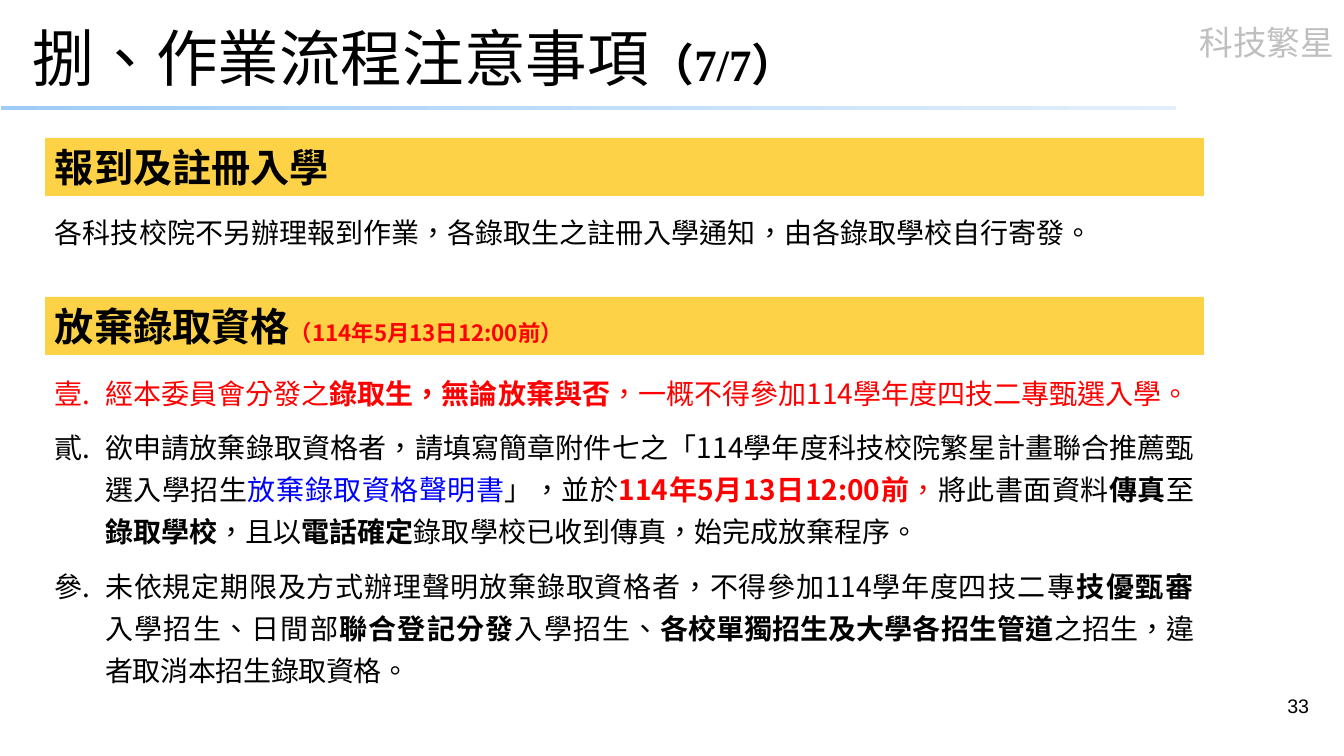
from lxml import etree
from pptx import Presentation
from pptx import util as u
from pptx.dml.color import RGBColor
from pptx.enum import shapes, text
from pptx.oxml.ns import qn

BLACK = RGBColor(0, 0, 0)
RED = RGBColor(255, 0, 0)
BLUE = RGBColor(0, 0, 255)
GREY = RGBColor(0xBF, 0xBF, 0xBF)
YELLOW = RGBColor(0xFD, 0xD2, 0x47)
BAR_START = RGBColor(0x9F, 0xCC, 0xF6)
BAR_END = RGBColor(0xE2, 0xEE, 0xFB)
SANS_TC, SANS_JP = "Noto Sans CJK SC", "Noto Sans CJK JP"

# Content: each run is (text, changes from the box's base style)
BOLD = {"bold": True}
TITLE = [("捌、作業流程注意事項", {}),
         ("（7/7）", {"size": 32, "latin": "Times New Roman", "bold": True})]
TAG = [("科技繁星", {})]
PAGE_NUMBER = [("33", {})]
HEADINGS = [
    (138, [("報到及註冊入學", {})]),
    (297, [("放棄錄取資格", {}),
           ("（114年5月13日12:00前）", {"size": 16, "color": RED})]),
]
ENROLMENT = [("各科技校院不另辦理報到作業，各錄取生之註冊入學通知，由各錄取學校自行寄發。", {})]
RULES = [
    [("經本委員會分發之", {"color": RED}),
     ("錄取生，無論放棄與否", {"color": RED, "bold": True}),
     ("，一概不得參加114學年度四技二專甄選入學。", {"color": RED})],
    [("欲申請放棄錄取資格者，請填寫簡章附件七之「114學年度科技校院繁星計畫聯合推薦甄選入學招生", {}),
     ("放棄錄取資格聲明書", {"color": BLUE}),
     ("」，並於", {}),
     ("114年5月13日12:00前", {"color": RED, "bold": True}),
     ("，", {"color": RED}),
     ("將此書面資料", {}), ("傳真", BOLD), ("至", {}), ("錄取學校", BOLD),
     ("，且以", {}), ("電話確定", BOLD),
     ("錄取學校已收到傳真，始完成放棄程序。", {})],
    [("未依規定期限及方式辦理聲明放棄錄取資格者，不得參加114學年度", {}),
     ("四技二專", {"spacing": 50}),
     ("技優甄審", {"bold": True, "spacing": 50}),
     ("入學招生、日間部", {"spacing": 50}),
     ("聯合登記分發", {"bold": True, "spacing": 50}),
     ("入學招生", {"spacing": 50}),
     ("、", {}),
     ("各校單獨招生及大學各招生管道", {"bold": True, "spacing": -30}),
     ("之招生，違者取消本招生錄取資格", {"spacing": -30}),
     ("。", {})],
]

PX_PER_INCH = 100.8
LEFT, WIDTH = 45, 1159  # shared column of headings and body text


def px(length):
    return u.Emu(round(length * u.Inches(1) / PX_PER_INCH))


def add_runs(paragraph, runs, size, font=SANS_TC, color=BLACK, bold=False):
    for words, changes in runs:
        style = {"size": size, "latin": font, "color": color, "bold": bold, **changes}
        run = paragraph.add_run()
        run.text = words
        run.font.size = u.Pt(style["size"])
        run.font.bold = style["bold"]
        run.font.color.rgb = style["color"]
        run.font.name = style["latin"]
        properties = run.font._element
        properties.set("lang", "zh-TW")
        if "spacing" in style:
            properties.set("spc", str(style["spacing"]))
        etree.SubElement(properties, qn("a:ea")).set("typeface", font)


def add_text(box, paragraphs, align=text.PP_ALIGN.LEFT,
             anchor=text.MSO_ANCHOR.TOP, numbered=False, **style):
    frame = box.text_frame
    frame.word_wrap = True
    frame.vertical_anchor = anchor
    for index, runs in enumerate(paragraphs):
        paragraph = frame.add_paragraph() if index else frame.paragraphs[0]
        paragraph.alignment = align
        if numbered:
            paragraph.line_spacing = u.Pt(30)
            paragraph.space_after = u.Pt(6)
            if index:
                paragraph.space_before = u.Pt(3)
            properties = paragraph._p.get_or_add_pPr()
            properties.set("marL", str(u.Inches(0.5)))
            properties.set("indent", str(-u.Inches(0.5)))
            properties.set("hangingPunct", "0")
            number = etree.SubElement(properties, qn("a:buAutoNum"))
            number.set("type", "ea1ChtPeriod")
        add_runs(paragraph, runs, **style)


def add_box(slide, left, top, width, height):
    return slide.shapes.add_textbox(px(left), px(top), px(width), px(height))


def add_bar(slide, left, top, width, height):
    bar = slide.shapes.add_shape(shapes.MSO_SHAPE.RECTANGLE,
                                 px(left), px(top), px(width), px(height))
    bar.shadow.inherit = False
    bar.line.fill.background()
    return bar


def main():
    presentation = Presentation()
    presentation.slide_width, presentation.slide_height = px(1344), px(756)
    slide = presentation.slides.add_slide(presentation.slide_layouts[6])

    # Rule under the title
    rule = add_bar(slide, 1, 106, 1175, 4)
    rule.fill.gradient()
    rule.fill.gradient_angle = 0
    for stop, color in zip(rule.fill.gradient_stops, (BAR_START, BAR_END)):
        stop.color.rgb = color

    # Title, corner tag and page number
    add_text(add_box(slide, 23, 22, 1138, 70), [TITLE],
             anchor=text.MSO_ANCHOR.MIDDLE, size=44, font=SANS_JP)
    add_text(add_box(slide, 1106, 17, 238, 50), [TAG],
             align=text.PP_ALIGN.RIGHT, size=24, font=SANS_JP, color=GREY)
    add_text(add_box(slide, 1006, 689, 313, 52), [PAGE_NUMBER],
             align=text.PP_ALIGN.RIGHT, size=14, font="Arial")

    # Section headings
    for top, runs in HEADINGS:
        heading = add_bar(slide, LEFT, top, WIDTH, 58)
        heading.fill.solid()
        heading.fill.fore_color.rgb = YELLOW
        add_text(heading, [runs], size=28, bold=True)

    # Body text
    justify = text.PP_ALIGN.JUSTIFY
    add_text(add_box(slide, LEFT, 211, WIDTH, 88), [ENROLMENT], align=justify, size=20)
    add_text(add_box(slide, LEFT, 363, WIDTH, 357), RULES,
             align=justify, numbered=True, size=20)

    presentation.save("out.pptx")


if __name__ == "__main__":
    main()
